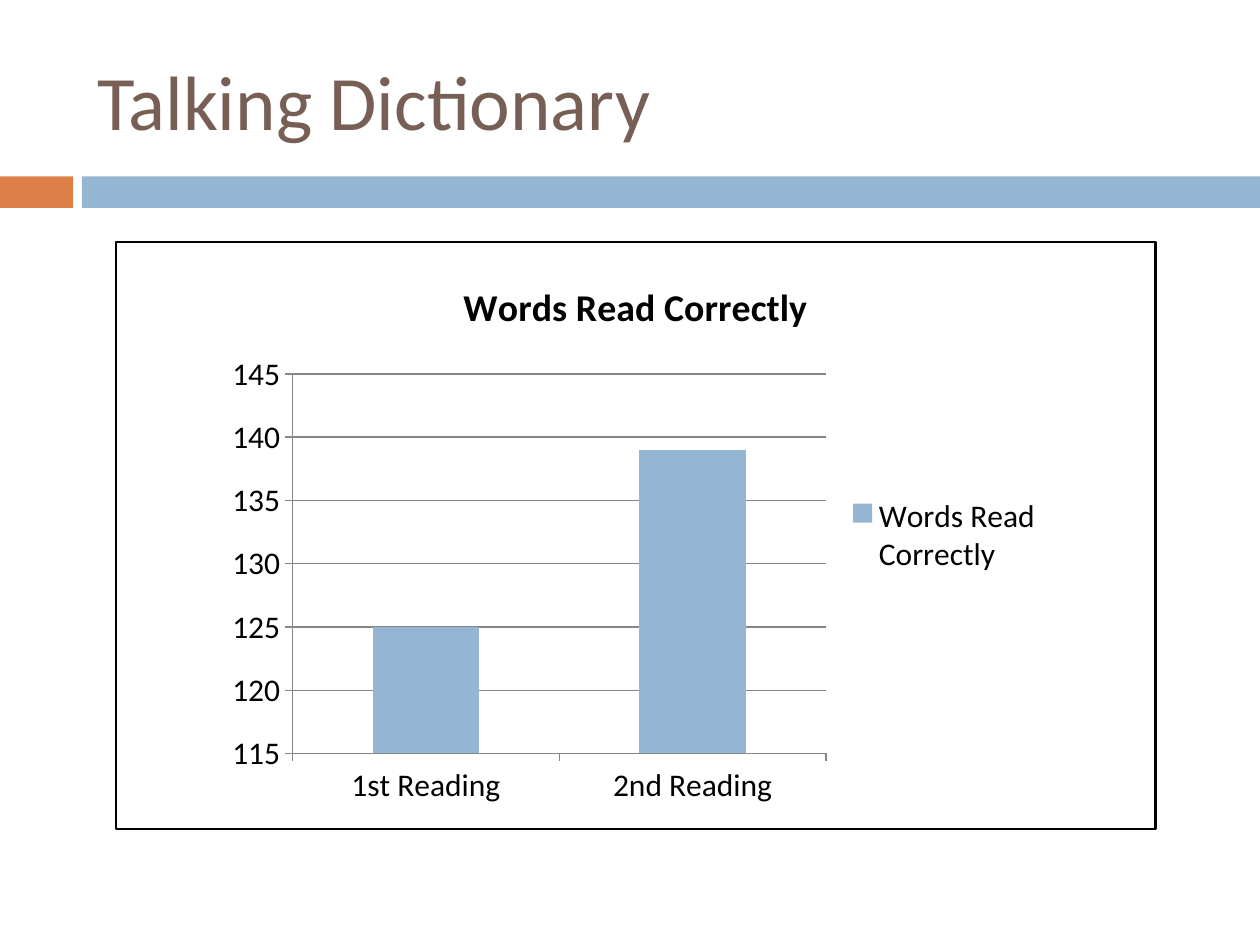
from dataclasses import dataclass

from pptx import Presentation
from pptx.chart.chart import Chart
from pptx.chart.data import CategoryChartData
from pptx.dml.color import RGBColor
from pptx.enum.chart import XL_CHART_TYPE, XL_LEGEND_POSITION, XL_TICK_MARK
from pptx.enum.shapes import MSO_SHAPE
from pptx.enum.text import MSO_ANCHOR, PP_ALIGN
from pptx.slide import Slide
from pptx.util import Inches, Pt

COLUMNS = XL_CHART_TYPE.COLUMN_CLUSTERED
LEGEND_RIGHT = XL_LEGEND_POSITION.RIGHT
TICK_OUTSIDE = XL_TICK_MARK.OUTSIDE
TICK_NONE = XL_TICK_MARK.NONE
RECTANGLE = MSO_SHAPE.RECTANGLE
MIDDLE = MSO_ANCHOR.MIDDLE
LEFT = PP_ALIGN.LEFT

ORANGE = RGBColor(0xDD, 0x80, 0x47)
BLUE = RGBColor(0x94, 0xB6, 0xD2)
BROWN = RGBColor(0x77, 0x5F, 0x55)
BLACK = RGBColor(0, 0, 0)
GRAY = RGBColor(0x86, 0x86, 0x86)

FONT = "Calibri"
MEASURE = "Words Read Correctly"
READINGS = {"1st Reading": 125, "2nd Reading": 139}


@dataclass(frozen=True)
class Panel:
    left: float
    top: float
    width: float
    height: float
    fill: RGBColor | None = None
    line: RGBColor | None = None


PANELS = [
    Panel(0, 1.4, 0.58, 0.25, fill=ORANGE),
    Panel(0.65, 1.4, 9.35, 0.25, fill=BLUE),
    Panel(0.92, 1.92, 8.25, 4.66, line=BLACK),
]


def draw_panel(slide: Slide, panel: Panel) -> None:
    shape = slide.shapes.add_shape(
        RECTANGLE, Inches(panel.left), Inches(panel.top),
        Inches(panel.width), Inches(panel.height))
    shape.shadow.inherit = False
    if panel.fill is None:
        shape.fill.background()
    else:
        shape.fill.solid()
        shape.fill.fore_color.rgb = panel.fill
    if panel.line is None:
        shape.line.fill.background()
    else:
        shape.line.color.rgb = panel.line
        shape.line.width = Pt(1.5)


def set_title(slide: Slide, text: str) -> None:
    title = slide.shapes.title
    title.left, title.top = Inches(0.67), Inches(0.25)
    title.width, title.height = Inches(8.92), Inches(1.08)
    title.text_frame.text = text
    title.text_frame.vertical_anchor = MIDDLE
    para = title.text_frame.paragraphs[0]
    para.alignment = LEFT
    para.font.name = FONT
    para.font.size = Pt(44)
    para.font.color.rgb = BROWN


def add_readings_chart(slide: Slide) -> Chart:
    data = CategoryChartData()
    data.categories = list(READINGS)
    data.add_series(MEASURE, list(READINGS.values()))
    chart = slide.shapes.add_chart(
        COLUMNS, Inches(1.71), Inches(2.03), Inches(6.67), Inches(4.44), data).chart
    chart.font.name = FONT
    chart.font.size = Pt(18)
    chart.font.color.rgb = BLACK
    return chart


def format_chart(chart: Chart) -> None:
    chart.has_title = True
    chart.chart_title.include_in_layout = False
    chart.chart_title.text_frame.text = MEASURE
    heading = chart.chart_title.text_frame.paragraphs[0]
    heading.font.name = FONT
    heading.font.size = Pt(21.6)
    heading.font.bold = True
    heading.font.color.rgb = BLACK

    chart.has_legend = True
    chart.legend.position = LEGEND_RIGHT
    chart.legend.include_in_layout = False

    plot = chart.plots[0]
    plot.gap_width = 150
    plot.vary_by_categories = False
    bars = plot.series[0].format.fill
    bars.solid()
    bars.fore_color.rgb = BLUE

    for axis in (chart.category_axis, chart.value_axis):
        axis.major_tick_mark = TICK_OUTSIDE
        axis.minor_tick_mark = TICK_NONE
        axis.format.line.color.rgb = GRAY
    scale = chart.value_axis
    scale.minimum_scale, scale.maximum_scale, scale.major_unit = 115, 145, 5
    scale.has_major_gridlines = True
    scale.major_gridlines.format.line.color.rgb = GRAY


def main() -> None:
    deck = Presentation()
    deck.slide_width, deck.slide_height = Inches(10), Inches(7.5)
    slide = deck.slides.add_slide(deck.slide_layouts[5])
    set_title(slide, "Talking Dictionary")
    for panel in PANELS:
        draw_panel(slide, panel)
    format_chart(add_readings_chart(slide))
    deck.save("out.pptx")


if __name__ == "__main__":
    main()
